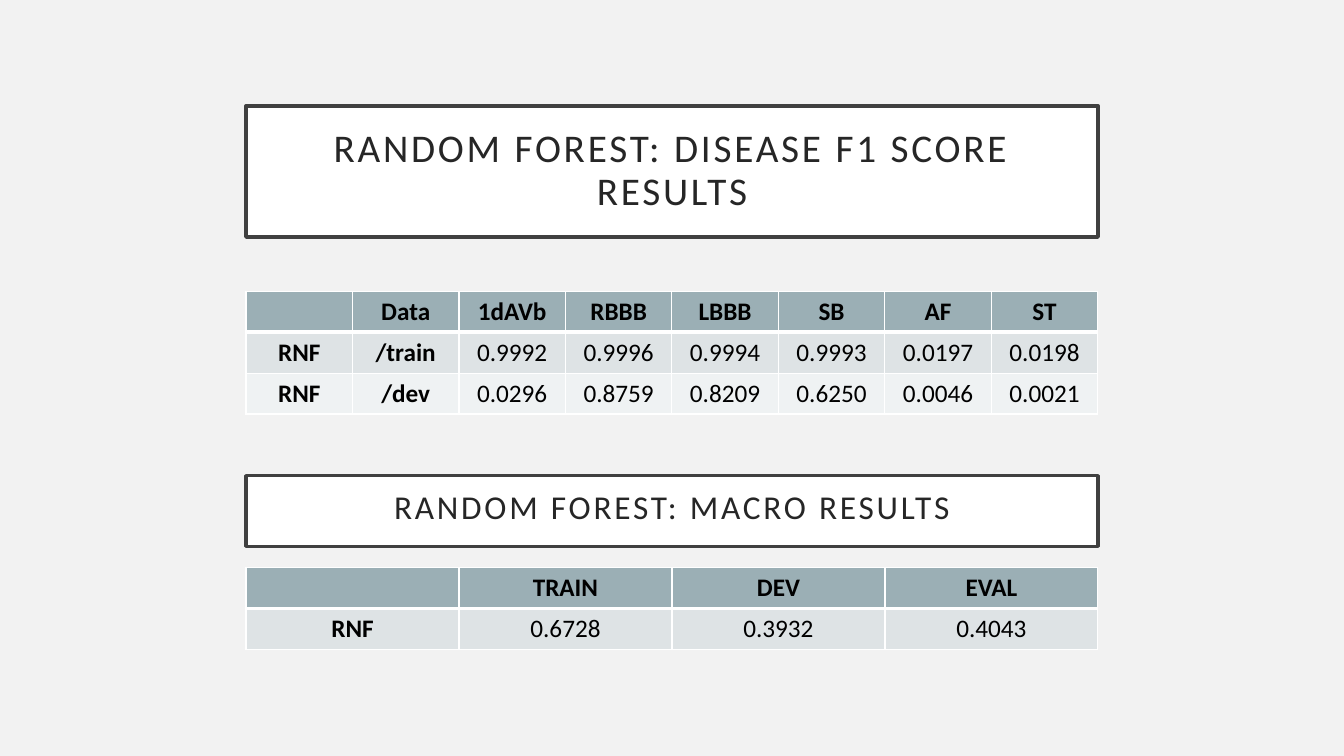
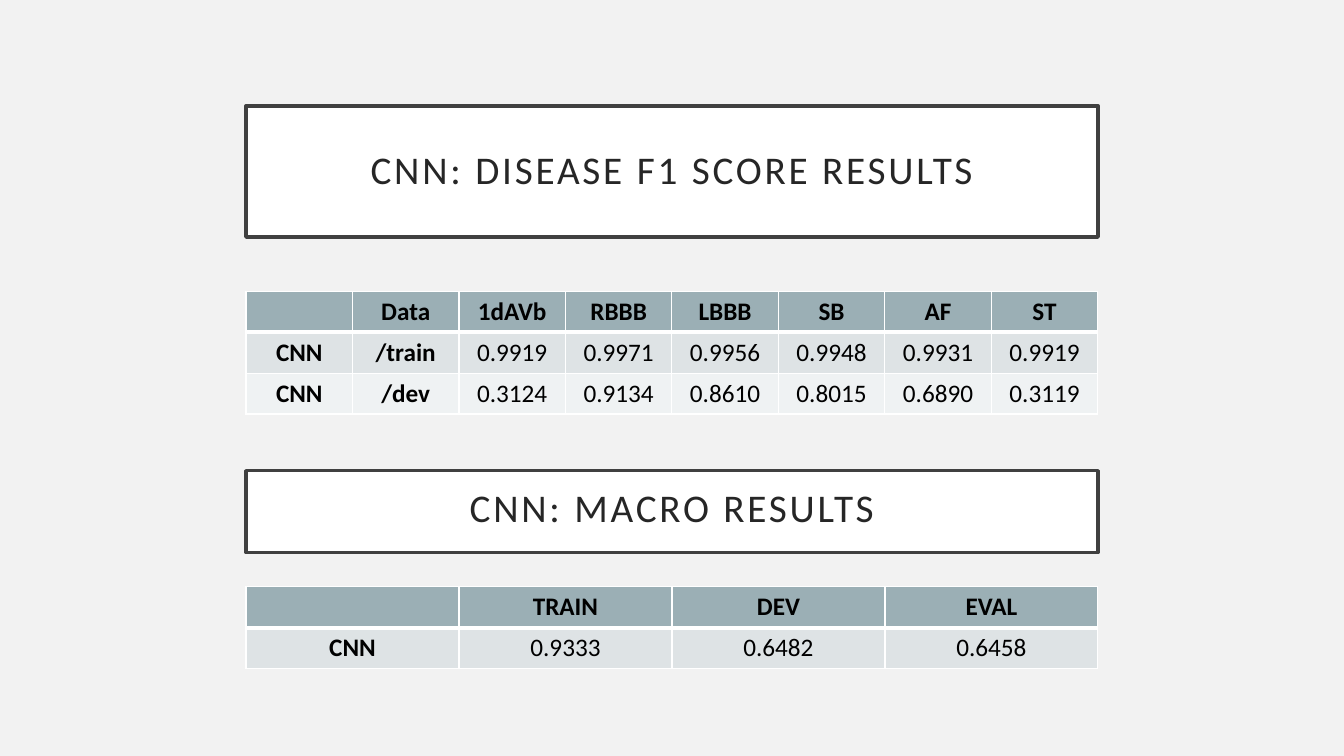
import pptx
import pptx.dml.color
import pptx.enum.shapes
import pptx.enum.text
import pptx.oxml
import pptx.oxml.ns
import pptx.util

# Grid: 8 columns between the side edges, 18.5 rows down the slide
WIDE, HIGH, EDGE = 13.33, 7.5, 2.44
COLS = 8
COL = (WIDE - 2 * EDGE) / COLS
ROW = HIGH / 18.5

# Colours and text formats
PAGE, WHITE, FRAME, INK = "F2F2F2", "FFFFFF", "404040", "262626"
BLACK, HEAD, BANDS = "000000", "9BAFB5", ("DEE3E5", "EFF2F3")
FONT = "Calibri"
MIDDLE = pptx.enum.text.MSO_ANCHOR.MIDDLE
CENTER = pptx.enum.text.PP_ALIGN.CENTER
THIN, THICK = 1, 3


def inch(value):
    return pptx.util.Inches(value)


def tint(code):
    return pptx.dml.color.RGBColor.from_string(code)


def apply(target, values):
    for name, value in values.items():
        setattr(target, name, value)


class Deck:
    def __init__(self):
        self.show = pptx.Presentation()
        apply(self.show, {"slide_width": inch(WIDE), "slide_height": inch(HIGH)})
        self.slide = None

    def page(self):
        self.slide = self.show.slides.add_slide(self.show.slide_layouts[6])
        self.paint(self.slide.background, PAGE)

    def paint(self, target, code):
        target.fill.solid()
        target.fill.fore_color.rgb = tint(code)

    def place(self, top, rows):
        return inch(EDGE), inch(top * ROW), inch(COLS * COL), inch(rows * ROW)

    def label(self, para, text, size, code, bold=False):
        para.alignment = CENTER
        run = para.add_run()
        run.text = text
        apply(run.font, {"name": FONT, "size": pptx.util.Pt(size), "bold": bold})
        run.font.color.rgb = tint(code)
        return run

    def title(self, text, top, rows, size=28, lead=0.9):
        kind = pptx.enum.shapes.MSO_SHAPE.RECTANGLE
        box = self.slide.shapes.add_shape(kind, *self.place(top, rows))
        box.shadow.inherit = False
        self.paint(box, WHITE)
        box.line.color.rgb = tint(FRAME)
        box.line.width = pptx.util.Pt(2.5)
        frame = box.text_frame
        pad = inch(0.2)
        apply(frame, {"word_wrap": True, "vertical_anchor": MIDDLE,
                      "margin_left": pad, "margin_right": pad,
                      "margin_top": pad, "margin_bottom": pad})
        para = frame.paragraphs[0]
        para.line_spacing = lead
        run = self.label(para, text, size, INK)
        run.font._element.set("spc", "200")

    def border(self, cell, top, base):
        sides = {"lnL": THIN, "lnR": THIN, "lnT": top, "lnB": base}
        props = cell._tc.get_or_add_tcPr()
        for spot, (side, width) in enumerate(sides.items()):
            props.insert(spot, pptx.oxml.parse_xml(
                f'<a:{side} {pptx.oxml.ns.nsdecls("a")} w="{width * 12700}">'
                f'<a:solidFill><a:srgbClr val="{WHITE}"/></a:solidFill></a:{side}>'))

    def table(self, data, top, keys):
        """Draw rows of text; the first `keys` columns are bold labels."""
        rows, cols = len(data), len(data[0])
        grid = self.slide.shapes.add_table(rows, cols, *self.place(top, rows)).table
        apply(grid, {"first_row": False, "horz_banding": False})
        for col in grid.columns:
            col.width = inch(COLS * COL / cols)
        for r, line in enumerate(data):
            grid.rows[r].height = inch(ROW)
            for c, text in enumerate(line):
                cell = grid.cell(r, c)
                self.paint(cell, BANDS[(r - 1) % 2] if r else HEAD)
                self.border(cell, THICK if r == 1 else THIN, THIN if r else THICK)
                if text:
                    self.label(cell.text_frame.paragraphs[0], text, 18, BLACK,
                               r == 0 or c < keys)


# Scores of each model, with the place and style of its lower half
SCORES = ["", "Data", "1dAVb", "RBBB", "LBBB", "SB", "AF", "ST"]
MACRO = ["", "TRAIN", "DEV", "EVAL"]
MODELS = [
    {"name": "RANDOM FOREST", "key": "RNF",
     "train": ["0.9992", "0.9996", "0.9994", "0.9993", "0.0197", "0.0198"],
     "dev": ["0.0296", "0.8759", "0.8209", "0.6250", "0.0046", "0.0021"],
     "macro": ["0.6728", "0.3932", "0.4043"],
     "title": {"top": 11.64, "rows": 1.73, "size": 23.8, "lead": 0.7},
     "base": 13.89},
    {"name": "CNN", "key": "CNN",
     "train": ["0.9919", "0.9971", "0.9956", "0.9948", "0.9931", "0.9919"],
     "dev": ["0.3124", "0.9134", "0.8610", "0.8015", "0.6890", "0.3119"],
     "macro": ["0.9333", "0.6482", "0.6458"],
     "title": {"top": 11.52, "rows": 2, "lead": 0.8},
     "base": 14.36},
]


def main():
    deck = Deck()
    for model in MODELS:
        name, key = model["name"], model["key"]
        deck.page()
        # Scores by disease
        deck.title(f"{name}: DISEASE F1 SCORE RESULTS", 2.59, 3.21)
        parts = [[key, f"/{part}", *model[part]] for part in ("train", "dev")]
        deck.table([SCORES, *parts], 7.13, 2)
        # Macro scores
        deck.title(f"{name}: MACRO RESULTS", **model["title"])
        deck.table([MACRO, [key, *model["macro"]]], model["base"], 1)
    deck.show.save("out.pptx")


if __name__ == "__main__":
    main()
